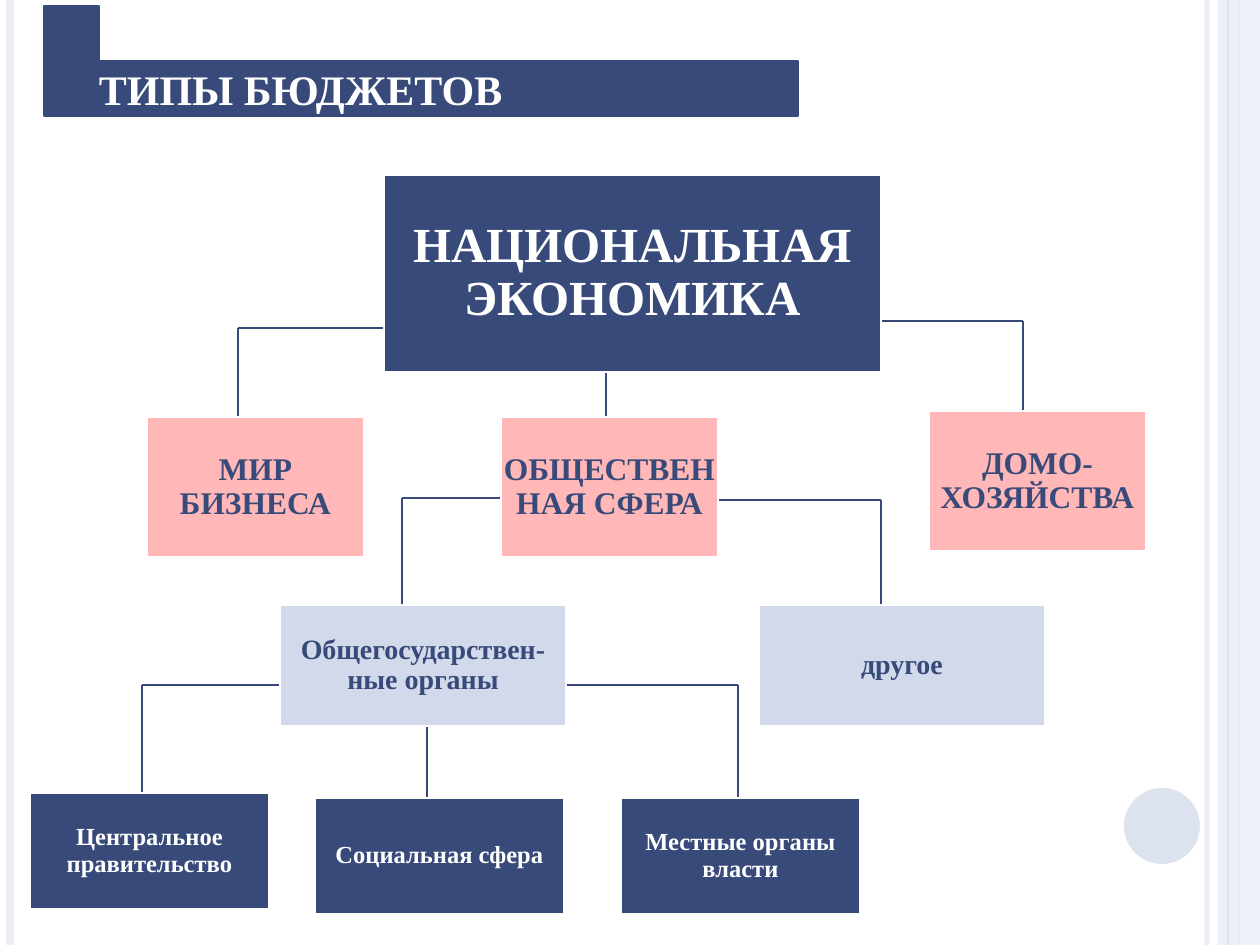
from pptx import Presentation
from pptx import util as u
from pptx.dml.color import RGBColor
from pptx.enum import shapes, text
from pptx.oxml.ns import qn
from lxml import etree

EMU_PER_PX = 914400 / 126
FONT = "Times New Roman"
NAVY = RGBColor(0x38, 0x4A, 0x79)
PINK = RGBColor(0xFF, 0xB7, 0xB7)
PALE = RGBColor(0xD1, 0xD9, 0xEA)
MIST = RGBColor(0xEB, 0xEE, 0xF6)
HAZE = RGBColor(0xDD, 0xE2, 0xEF)
WHITE = RGBColor(0xFF, 0xFF, 0xFF)

# Level of the tree: fill, text colour, text size, inset, box height
LEVELS = {
    "economy": (NAVY, WHITE, 28, 2, 197),
    "sector": (PINK, NAVY, 18, 2, 140),
    "body": (PALE, NAVY, 16, 1, 121),
    "unit": (NAVY, WHITE, 14, 1, 116),
}
# Level, left, top, width, label
NODES = [
    ("economy", 354, 0, 497, "НАЦИОНАЛЬНАЯ ЭКОНОМИКА"),
    ("sector", 117, 242, 217, "МИР БИЗНЕСА"),
    ("sector", 471, 242, 217, "ОБЩЕСТВЕННАЯ СФЕРА"),
    ("sector", 899, 236, 217, "ДОМО-ХОЗЯЙСТВА"),
    ("body", 250, 430, 286, "Общегосударствен-ные органы"),
    ("body", 729, 430, 286, "другое"),
    ("unit", 0, 618, 239, "Центральное правительство"),
    ("unit", 285, 623, 249, "Социальная сфера"),
    ("unit", 591, 623, 239, "Местные органы власти"),
]
# Elbows run sideways from a parent, then down to a child
ELBOWS = [
    (359, 153, 208, 266), (822, 146, 993, 260),
    (523, 323, 372, 436), (679, 325, 851, 439),
    (322, 510, 112, 625), (484, 510, 708, 624),
]
# Stems run straight down: x, top, bottom
STEMS = [(576, 197, 329), (397, 546, 678)]


def px(value):
    return u.Emu(round(value * EMU_PER_PX))


def set_alpha(element, percent):
    color = element.find(".//" + qn("a:srgbClr"))
    etree.SubElement(color, qn("a:alpha")).set("val", str(percent * 1000))


def add_line(slide, x1, y1, x2, y2, color, width):
    line = slide.shapes.add_connector(
        shapes.MSO_CONNECTOR.STRAIGHT, px(x1), px(y1), px(x2), px(y2))
    line.line.color.rgb = color
    line.line.width = u.Pt(width)
    etree.SubElement(line._element.spPr, qn("a:effectLst"))
    return line


def add_block(slide, kind, left, top, width, height, fill, outline=None):
    shape = slide.shapes.add_shape(kind, px(left), px(top), px(width), px(height))
    shape.shadow.inherit = False
    shape.fill.solid()
    shape.fill.fore_color.rgb = fill
    if outline is None:
        shape.line.fill.background()
    else:
        shape.line.color.rgb = outline
        shape.line.width = u.Pt(1.25)
    return shape


def write_label(shape, label, size, color, alignment):
    frame = shape.text_frame
    frame.word_wrap = True
    frame.vertical_anchor = text.MSO_ANCHOR.MIDDLE
    paragraph = frame.paragraphs[0]
    paragraph.alignment = alignment
    run = paragraph.add_run()
    run.text = label
    run.font.name = FONT
    run.font.size = u.Pt(size)
    run.font.bold = True
    run.font.color.rgb = color
    return paragraph


def add_decoration(slide, left, top, width, height):
    right, bottom = left + width, top + height

    def add_stripe(x, color, weight):
        return add_line(slide, x, top, x, bottom, color, weight)

    # Side stripes and the right band
    set_alpha(add_stripe(right - 53, MIST, 3)._element, 93)
    add_stripe(left + 10, MIST, 4.5)
    add_stripe(right - 21, HAZE, 1.5)
    band = add_block(slide, shapes.MSO_SHAPE.RECTANGLE,
                     right - 42, top, 42, height, MIST)
    set_alpha(band._element.spPr, 87)
    add_stripe(right - 32, HAZE, 0.75)
    # Circle
    add_block(slide, shapes.MSO_SHAPE.OVAL, right - 136, bottom - 157, 76, 76, HAZE)


def add_title(slide, left, top, width, height):
    corner = add_block(slide, shapes.MSO_SHAPE.RECTANGLE,
                       left, top, width, height, NAVY, NAVY)
    # The L-shaped preset has no member in MSO_SHAPE
    corner._element.spPr.find(qn("a:prstGeom")).set("prst", "corner")
    corner.text_frame.margin_left = px(55)
    write_label(corner, "ТИПЫ БЮДЖЕТОВ", 24, WHITE, text.PP_ALIGN.LEFT)


def add_tree(slide, left, top):
    # Branches
    branches = [(x, y1, x, y2) for x, y1, y2 in STEMS]
    for x1, y1, x2, y2 in ELBOWS:
        branches += [(x1, y1, x2, y1), (x2, y1, x2, y2)]
    for x1, y1, x2, y2 in branches:
        add_line(slide, left + x1, top + y1, left + x2, top + y2, NAVY, 1.5)
    # Nodes
    for level, x, y, width, label in NODES:
        fill, color, size, inset, height = LEVELS[level]
        node = add_block(slide, shapes.MSO_SHAPE.RECTANGLE,
                         left + x, top + y, width, height, fill, WHITE)
        frame = node.text_frame
        frame.margin_left = frame.margin_right = px(inset)
        frame.margin_top = frame.margin_bottom = px(inset)
        paragraph = write_label(node, label, size, color, text.PP_ALIGN.CENTER)
        paragraph.line_spacing = 0.9


def main():
    presentation = Presentation()
    presentation.slide_width, presentation.slide_height = px(1260), px(945)
    slide = presentation.slides.add_slide(presentation.slide_layouts[6])
    add_decoration(slide, 0, 0, 1260, 945)
    add_tree(slide, 30, 175)
    add_title(slide, 44, 6, 754, 110)
    presentation.save("out.pptx")


if __name__ == "__main__":
    main()
